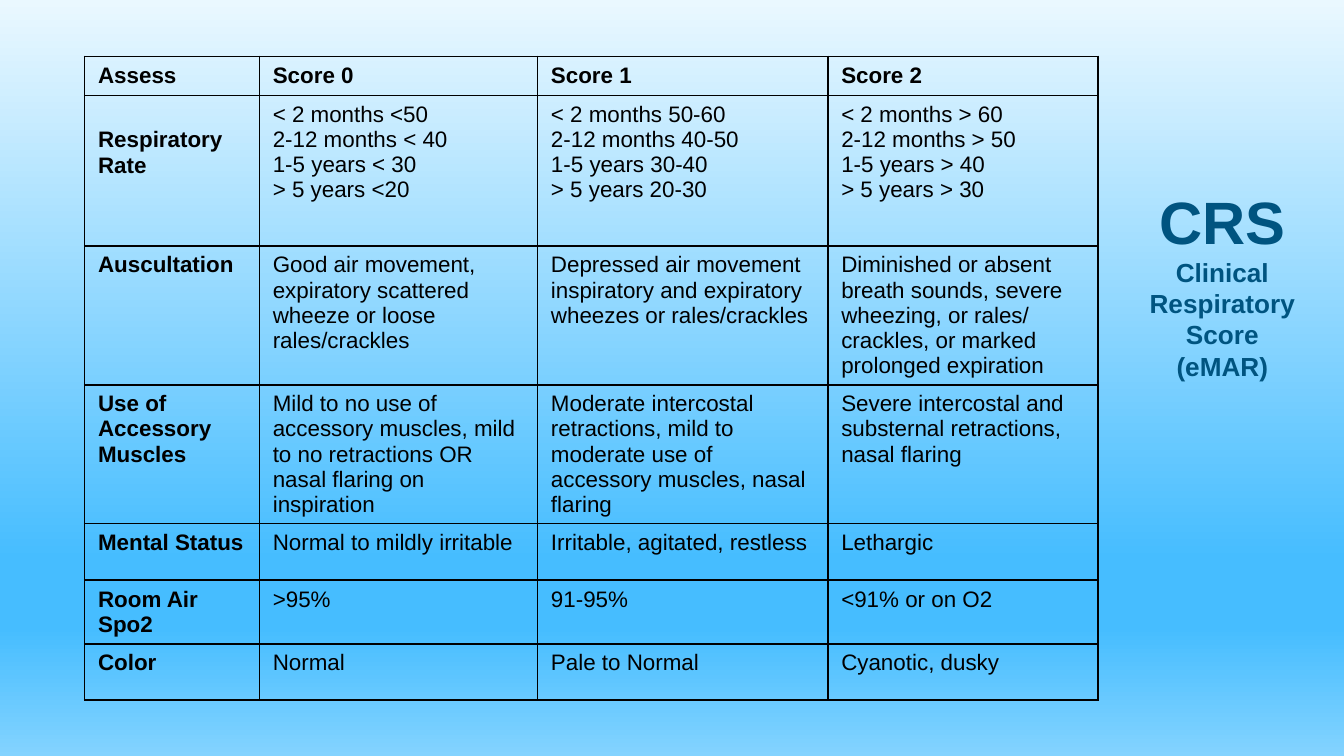
from copy import deepcopy

from pptx import Presentation
from pptx.dml.color import RGBColor
from pptx.enum.text import MSO_ANCHOR, MSO_AUTO_SIZE, PP_ALIGN
from pptx.oxml import parse_xml
from pptx.oxml.ns import nsdecls, qn
from pptx.util import Inches, Pt

BOTTOM, CENTER, NO_FIT = MSO_ANCHOR.BOTTOM, PP_ALIGN.CENTER, MSO_AUTO_SIZE.NONE
BLACK = RGBColor(0x00, 0x00, 0x00)
NAVY = RGBColor(0x00, 0x54, 0x80)
FONT = "Arial"
TITLE_ONLY = 5

SKY_STOPS = [(0, "EAF8FF"), (74, "46BDFF"), (83, "46BDFF"), (100, "83D3FF")]

TITLE_LINES = [("CRS", 32), ("Clinical Respiratory Score", 14), ("(eMAR)", 14)]

SCORES = [
    ("Assess", "Score 0", "Score 1", "Score 2"),
    ("Respiratory Rate",
     "< 2 months <50\n2-12 months < 40\n1-5 years < 30\n> 5 years <20",
     "< 2 months 50-60\n2-12 months 40-50\n1-5 years 30-40\n> 5 years 20-30",
     "< 2 months > 60\n2-12 months > 50\n1-5 years > 40\n> 5 years > 30"),
    ("Auscultation",
     "Good air movement, expiratory scattered wheeze or loose rales/crackles",
     "Depressed air movement inspiratory and expiratory wheezes or rales/crackles",
     "Diminished or absent breath sounds, severe wheezing, or rales/ crackles, "
     "or marked prolonged expiration"),
    ("Use of Accessory Muscles",
     "Mild to no use of accessory muscles, mild to no retractions OR "
     "nasal flaring on inspiration",
     "Moderate intercostal retractions, mild to moderate use of "
     "accessory muscles, nasal flaring",
     "Severe intercostal and substernal retractions, nasal flaring"),
    ("Mental Status", "Normal to mildly irritable",
     "Irritable, agitated, restless", "Lethargic"),
    ("Room Air Spo2", ">95%", "91-95%", "<91% or on O2"),
    ("Color", "Normal", "Pale to Normal", "Cyanotic, dusky"),
]
COLUMN_WIDTHS = [1.3, 2.07, 2.16, 2.01]
ROW_HEIGHTS = [0.29, 1.12, 1.03, 1.03, 0.42, 0.47, 0.42]


def style_run(run, size, color, bold):
    run.font.name = FONT
    run.font.size = Pt(size)
    run.font.color.rgb = color
    run.font.bold = bold


def add_borders(cell):
    properties = cell._tc.get_or_add_tcPr()
    for side in ("lnL", "lnR", "lnT", "lnB"):
        properties.append(parse_xml(
            f'<a:{side} {nsdecls("a")} w="{Pt(1)}"><a:solidFill>'
            f'<a:srgbClr val="{BLACK}"/></a:solidFill></a:{side}>'))


def paint_background(slide):
    fill = slide.background.fill
    fill.gradient()
    fill.gradient_angle = 270
    stops = slide.element.find(".//" + qn("a:gsLst"))
    for stop in list(stops):
        stops.remove(stop)
    for percent, color in SKY_STOPS:
        stops.append(parse_xml(
            f'<a:gs {nsdecls("a")} pos="{percent * 1000}">'
            f'<a:srgbClr val="{color}"/></a:gs>'))


def add_title(slide):
    title = slide.shapes.title
    title.left, title.top = Inches(8.39), Inches(2.06)
    title.width, title.height = Inches(1.41), Inches(0.83)
    frame = title.text_frame
    frame.text = "\v".join(text for text, _ in TITLE_LINES)
    frame.word_wrap = True
    frame.auto_size = NO_FIT
    frame.vertical_anchor = BOTTOM
    heading = frame.paragraphs[0]
    heading.alignment = CENTER
    for run, (_, size) in zip(heading.runs, TITLE_LINES):
        style_run(run, size, NAVY, True)
    # A line break takes the size of the run before it
    for line_break, run in zip(heading._p.findall(qn("a:br")), heading.runs):
        line_break.append(deepcopy(run._r.rPr))


def add_score_table(slide):
    table = slide.shapes.add_table(
        len(SCORES), len(COLUMN_WIDTHS), Inches(0.63), Inches(0.42),
        Inches(sum(COLUMN_WIDTHS)), Inches(sum(ROW_HEIGHTS))).table
    table.horz_banding = False
    table.first_row = False
    for column, width in zip(table.columns, COLUMN_WIDTHS):
        column.width = Inches(width)
    for row, height in zip(table.rows, ROW_HEIGHTS):
        row.height = Inches(height)
    for r, texts in enumerate(SCORES):
        for c, text in enumerate(texts):
            cell = table.cell(r, c)
            cell.text_frame.text = text
            add_borders(cell)
            cell.fill.background()
            for paragraph in cell.text_frame.paragraphs:
                for run in paragraph.runs:
                    style_run(run, 12, BLACK, r == 0 or c == 0)
    # The respiratory rate label starts one line lower
    table.cell(1, 0).margin_top = Inches(0.24)


def main():
    deck = Presentation()
    deck.slide_width = Inches(10)
    deck.slide_height = deck.slide_width * 9 // 16
    slide = deck.slides.add_slide(deck.slide_layouts[TITLE_ONLY])
    paint_background(slide)
    add_score_table(slide)
    add_title(slide)
    deck.save("out.pptx")


if __name__ == "__main__":
    main()
